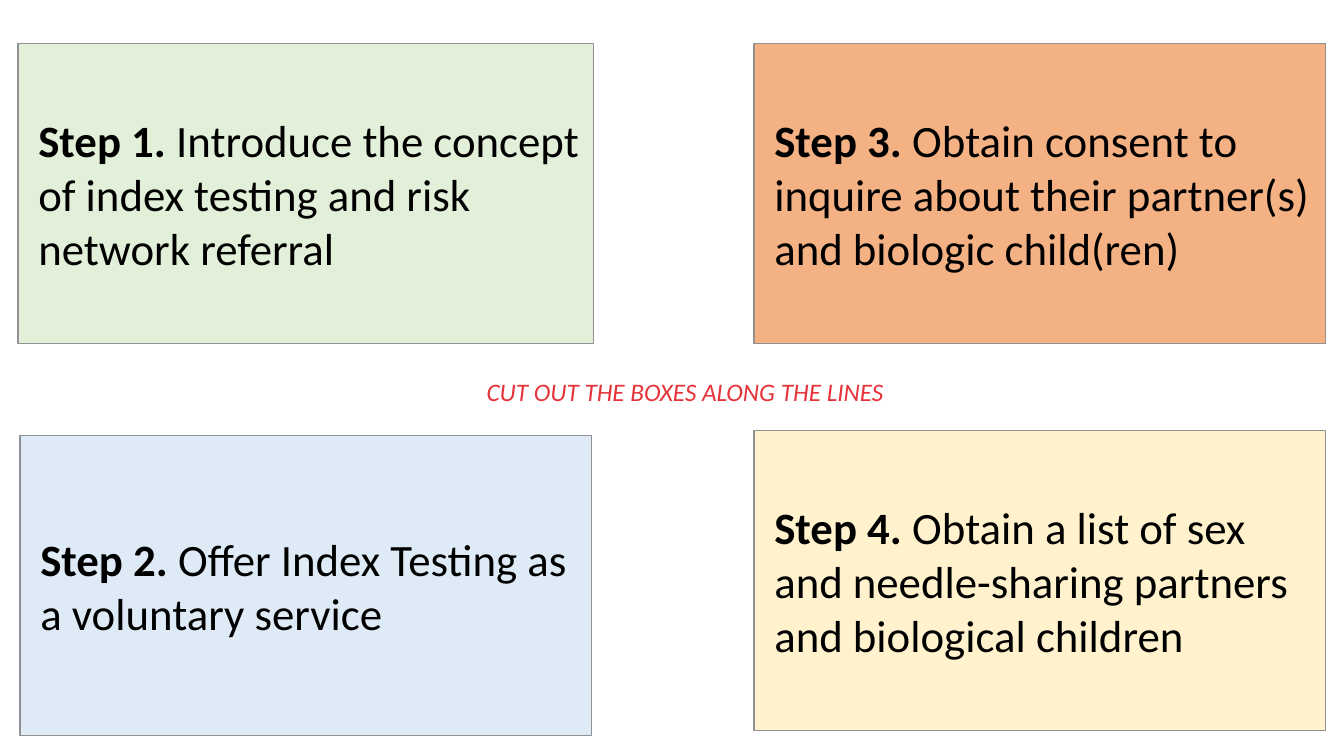
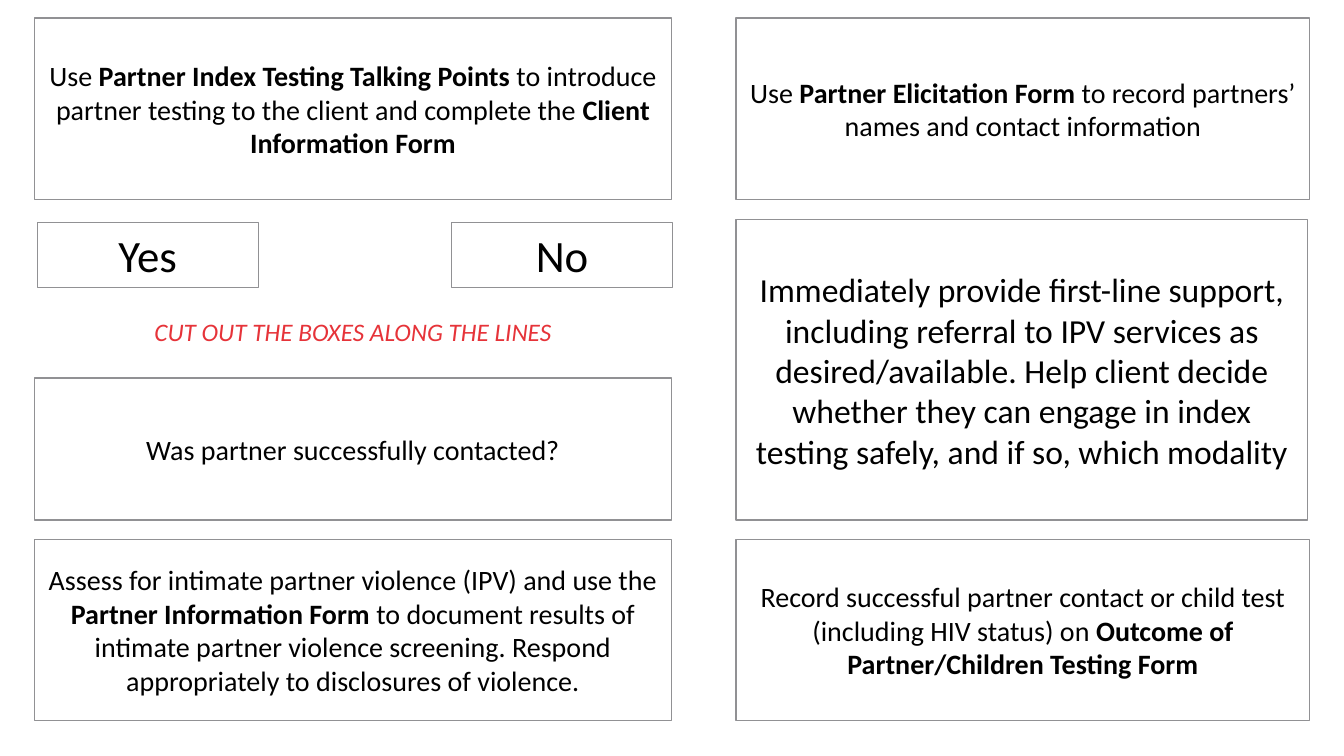
"""Build two slides of cut-out cards for the index testing steps."""
from pptx import Presentation
from pptx.dml.color import RGBColor
from pptx.enum.shapes import MSO_SHAPE
from pptx.enum.text import MSO_ANCHOR, PP_ALIGN
from pptx.util import Inches, Pt

RECT = MSO_SHAPE.RECTANGLE
MIDDLE = MSO_ANCHOR.MIDDLE
LEFT, CENTER = PP_ALIGN.LEFT, PP_ALIGN.CENTER
FONT = "Calibri"
COLORS = {
    "text": "000000", "line": "919194", "cut": "E63339",
    "green": "E2F0D9", "orange": "F4B183", "yellow": "FFF2CC", "blue": "DEEBF7",
}
CUT_NOTE = "CUT OUT THE BOXES ALONG THE LINES"

STEP_H = 2.98
STEPS = [
    ("**Step 1. **Introduce the concept of index testing and risk network referral",
     (0.18, 0.43, 5.71, STEP_H), "green"),
    ("**Step 3. **Obtain consent to inquire about their partner(s) and biologic child(ren)",
     (7.48, 0.43, 5.67, STEP_H), "orange"),
    ("**Step 4. **Obtain a list of sex and needle-sharing partners and biological children",
     (7.48, 4.27, 5.67, STEP_H), "yellow"),
    ("**Step 2.** Offer Index Testing as a voluntary service",
     (0.2, 4.32, 5.67, STEP_H), "blue"),
]

COLUMNS = [(0.34, 6.32), (7.3, 5.69)]
ROWS = [(0.18, 1.8), (5.35, 1.8)]
FORMS = [
    ["Use **Partner Index Testing Talking Points **to introduce partner testing "
     "to the client and complete the **Client Information Form**",
     "Use **Partner Elicitation Form **to record partners’ names and contact information"],
    ["Assess for intimate partner violence (IPV) and use the **Partner Information Form **"
     "to document results of intimate partner violence screening. "
     "Respond appropriately to disclosures of violence.",
     "Record successful partner contact or child test (including HIV status) on "
     "**Outcome of Partner/Children Testing Form**"],
]
QUESTION = "Was partner successfully contacted?"
SUPPORT = ("Immediately provide first-line support, including referral to IPV services as "
           "desired/available. Help client decide whether they can engage in index testing "
           "safely, and if so, which modality")
ANSWERS = [("Yes", 0.37), ("No", 4.48)]


def rgb(name):
    return RGBColor.from_string(COLORS[name])


def write(sp, text, size, align=CENTER, color="text", italic=None):
    """Write text into a shape, with bold between double asterisks."""
    tf = sp.text_frame
    tf.word_wrap = True
    p = tf.paragraphs[0]
    p.alignment = align
    for i, part in enumerate(text.split("**")):
        if part:
            r = p.add_run()
            r.text = part
            r.font.name, r.font.size = FONT, Pt(size)
            r.font.bold, r.font.italic = i % 2 == 1, italic
            r.font.color.rgb = rgb(color)


def add_card(s, text, box, size=20, fill=None, align=CENTER, inset=0.1, line=1):
    sp = s.shapes.add_shape(RECT, *map(Inches, box))
    sp.shadow.inherit = False
    if fill:
        sp.fill.solid()
        sp.fill.fore_color.rgb = rgb(fill)
    else:
        sp.fill.background()
    sp.line.color.rgb = rgb("line")
    sp.line.width = Pt(line)
    sp.text_frame.vertical_anchor = MIDDLE
    sp.text_frame.margin_left = Inches(inset)
    write(sp, text, size, align)


def add_cut_note(s, left, top, width):
    sp = s.shapes.add_textbox(*map(Inches, (left, top, width, 0.4)))
    write(sp, CUT_NOTE, 18, color="cut", italic=True)


def build_steps(s):
    for text, box, fill in STEPS:
        add_card(s, text, box, 32, fill, LEFT, inset=0.2)
    add_cut_note(s, 3.48, 3.68, 6.63)


def build_forms(s):
    for (top, height), texts in zip(ROWS, FORMS):
        for (left, width), text in zip(COLUMNS, texts):
            add_card(s, text, (left, top, width, height))
    left, width = COLUMNS[0]
    add_card(s, QUESTION, (left, 3.75, width, 1.41))
    for text, x in ANSWERS:
        add_card(s, text, (x, 2.21, 2.19, 0.64), 32, line=0.75)
    add_cut_note(s, left, 3.09, width)
    add_card(s, SUPPORT, (COLUMNS[1][0], 2.18, 5.67, STEP_H), 24)


def main():
    prs = Presentation()
    prs.slide_width, prs.slide_height = Inches(13.33), Inches(7.5)
    for build in (build_steps, build_forms):
        build(prs.slides.add_slide(prs.slide_layouts[6]))
    prs.save("out.pptx")


if __name__ == "__main__":
    main()
